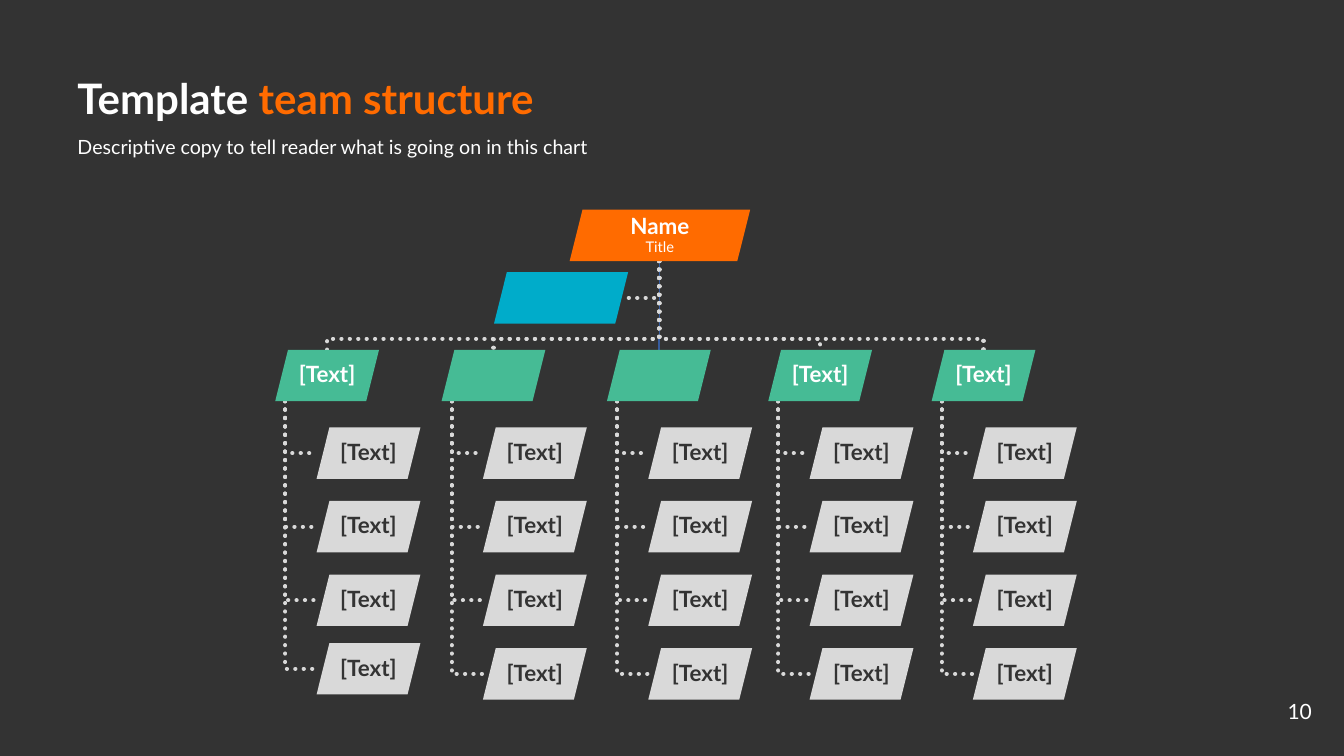
from pptx import Presentation
from pptx.dml.color import RGBColor
from pptx.enum.dml import MSO_LINE
from pptx.enum.shapes import MSO_SHAPE
from pptx.enum.text import MSO_ANCHOR, PP_ALIGN
from pptx.oxml.ns import qn
from pptx.util import Inches, Pt

DARK = RGBColor(0x33, 0x33, 0x33)
WHITE = RGBColor(0xFF, 0xFF, 0xFF)
ORANGE = RGBColor(0xFF, 0x6B, 0x00)
TEAL = RGBColor(0x00, 0xAC, 0xCA)
GREEN = RGBColor(0x46, 0xBB, 0x95)
GREY = RGBColor(0xD9, 0xD9, 0xD9)
BLUE = RGBColor(0x36, 0x5B, 0x9D)
FONT = "Lato"

# Chart geometry in inches
CARD_WIDTH, CARD_HEIGHT = 1.03, 0.51
LEADER_LEFT, LEADER_TOP, LEADER_WIDTH = 5.65, 2.08, 1.79
ASSISTANT_LEFT, ASSISTANT_TOP, ASSISTANT_WIDTH = 4.9, 2.7, 1.33
TRUNK_X = 6.54
BUS_Y = 3.36
HEAD_TOP = 3.47
MEMBER_TOP, MEMBER_STEP = 4.24, 0.73
MEMBER_INDENT, RAIL_INDENT = 0.41, 0.1
TEAMS = [(2.73, "[Text]"), (4.38, ""), (6.02, ""), (7.62, "[Text]"), (9.24, "[Text]")]
MIDDLE_TEAM = 2
MEMBERS = ["[Text]"] * 4
FIRST_TEAM_LAST_TOP = 6.38


def add_span(paragraph, text, size, color, bold=False):
    span = paragraph.add_run()
    span.text = text
    span.font.name = FONT
    span.font.size = Pt(size)
    span.font.bold = bold
    span.font.color.rgb = color


def add_text(page, left, top, width, height, spans, size, bold=False,
             align=PP_ALIGN.LEFT, anchor=MSO_ANCHOR.TOP, spacing=0.9):
    box = page.shapes.add_textbox(Inches(left), Inches(top), Inches(width), Inches(height))
    frame = box.text_frame
    frame.word_wrap = True
    frame.vertical_anchor = anchor
    paragraph = frame.paragraphs[0]
    paragraph.alignment = align
    paragraph.line_spacing = spacing
    for text, color in spans:
        add_span(paragraph, text, size, color, bold)


def add_card(page, left, top, width, fill, name="", color=WHITE, title=""):
    card = page.shapes.add_shape(MSO_SHAPE.PARALLELOGRAM, Inches(left), Inches(top),
                                 Inches(width), Inches(CARD_HEIGHT))
    card.shadow.inherit = False
    card.fill.solid()
    card.fill.fore_color.rgb = fill
    card.line.fill.background()
    if not name:
        return
    frame = card.text_frame
    frame.word_wrap = False
    frame.vertical_anchor = MSO_ANCHOR.MIDDLE
    frame.margin_left = frame.margin_right = Inches(0.01)
    frame.margin_top = frame.margin_bottom = Inches(0.01)
    paragraph = frame.paragraphs[0]
    paragraph.alignment = PP_ALIGN.CENTER
    paragraph.line_spacing = 0.9
    add_span(paragraph, name, 16, color, bold=True)
    if title:
        paragraph.add_line_break()
        add_span(paragraph, title, 10.5, color)


def add_branch(page, points, color=GREY, width=3, dotted=True):
    corners = [(Inches(x), Inches(y)) for x, y in points]
    builder = page.shapes.build_freeform(*corners[0], scale=1.0)
    builder.add_line_segments(corners[1:], close=False)
    branch = builder.convert_to_shape()
    branch.shadow.inherit = False
    branch.fill.background()
    branch.line.color.rgb = color
    branch.line.width = Pt(width)
    if dotted:
        branch.line.dash_style = MSO_LINE.ROUND_DOT
        branch.element.spPr.find(qn("a:ln")).set("cap", "rnd")


def member_tops(team):
    tops = [MEMBER_TOP + MEMBER_STEP * row for row in range(len(MEMBERS))]
    if team == 0:
        tops[-1] = FIRST_TEAM_LAST_TOP
    return tops


def add_branches(page):
    trunk_top = LEADER_TOP + CARD_HEIGHT
    assistant_y = ASSISTANT_TOP + CARD_HEIGHT / 2
    add_branch(page, [(TRUNK_X, trunk_top), (TRUNK_X, assistant_y),
                      (ASSISTANT_LEFT + ASSISTANT_WIDTH, assistant_y)])
    for team, (left, _) in reversed(list(enumerate(TEAMS))):
        rail_x = left + RAIL_INDENT
        for top in reversed(member_tops(team)):
            member_y = top + CARD_HEIGHT / 2
            add_branch(page, [(rail_x, HEAD_TOP + CARD_HEIGHT), (rail_x, member_y),
                              (left + MEMBER_INDENT, member_y)])
        head_x = left + CARD_WIDTH / 2
        route = [(TRUNK_X, trunk_top), (TRUNK_X, BUS_Y), (head_x, BUS_Y), (head_x, HEAD_TOP)]
        if team == MIDDLE_TEAM:
            add_branch(page, route, BLUE, width=1, dotted=False)
        else:
            add_branch(page, route)


def add_cards(page):
    add_card(page, LEADER_LEFT, LEADER_TOP, LEADER_WIDTH, ORANGE, "Name", title="Title")
    for team, (left, head) in enumerate(TEAMS):
        add_card(page, left, HEAD_TOP, CARD_WIDTH, GREEN, head)
        for top, member in zip(member_tops(team), MEMBERS):
            add_card(page, left + MEMBER_INDENT, top, CARD_WIDTH, GREY, member, DARK)
    add_card(page, ASSISTANT_LEFT, ASSISTANT_TOP, ASSISTANT_WIDTH, TEAL)


def main():
    deck = Presentation()
    deck.slide_width, deck.slide_height = Inches(13.33), Inches(7.5)
    page = deck.slides.add_slide(deck.slide_layouts[6])
    page.background.fill.solid()
    page.background.fill.fore_color.rgb = DARK

    # Page number, heading and description
    add_text(page, 12.22, 6.88, 0.89, 0.35, [("10", WHITE)], 15,
             align=PP_ALIGN.RIGHT, spacing=1.0)
    add_text(page, 0.67, 0.56, 9.75, 0.89,
             [("Template ", WHITE), ("team structure", ORANGE)], 30,
             bold=True, anchor=MSO_ANCHOR.MIDDLE)
    add_text(page, 0.67, 1.32, 7.31, 0.62,
             [("Descriptive copy to tell reader what is going on in this chart", WHITE)], 14)

    # Team chart: branches lie behind the cards
    add_branches(page)
    add_cards(page)

    deck.save("out.pptx")


if __name__ == "__main__":
    main()
